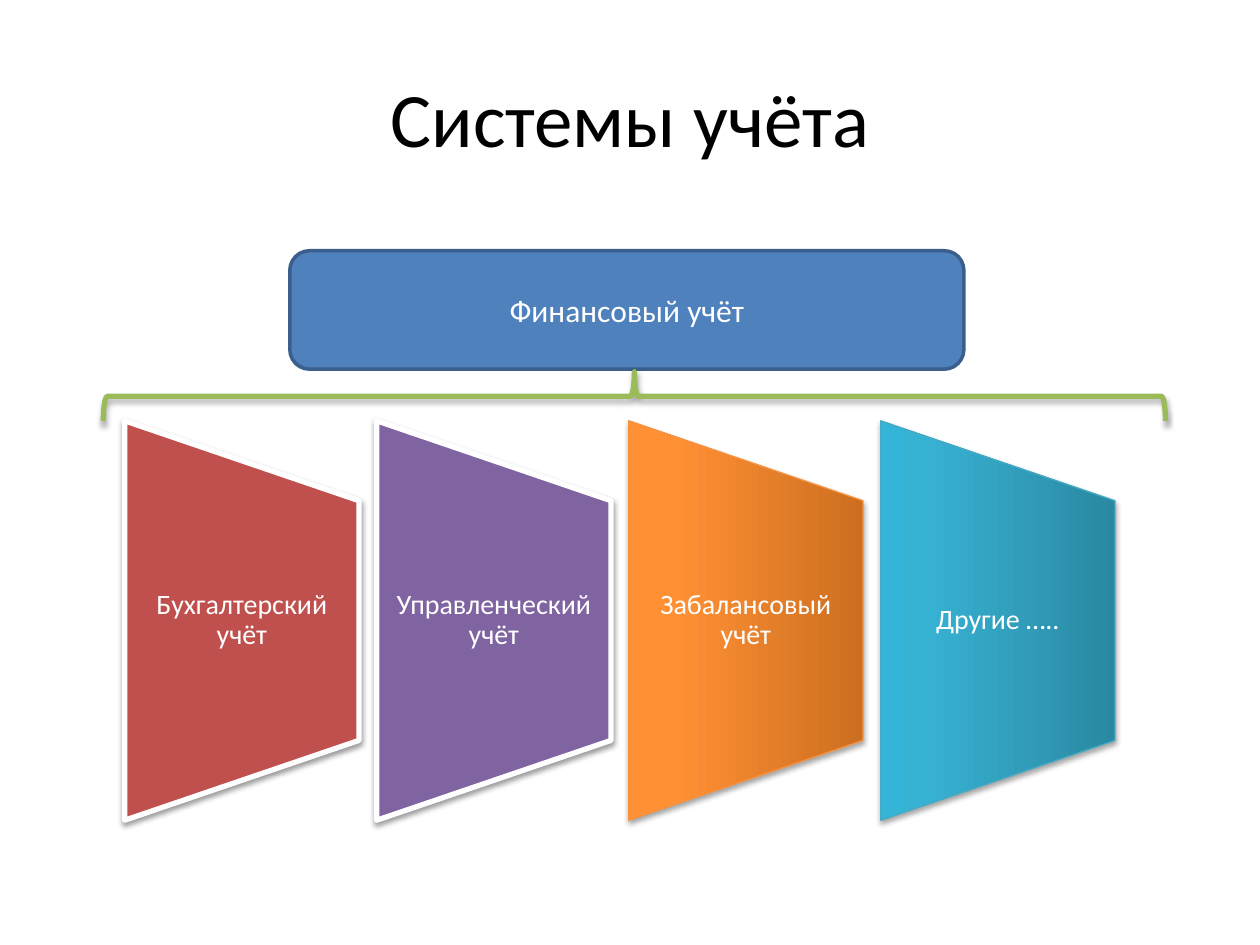
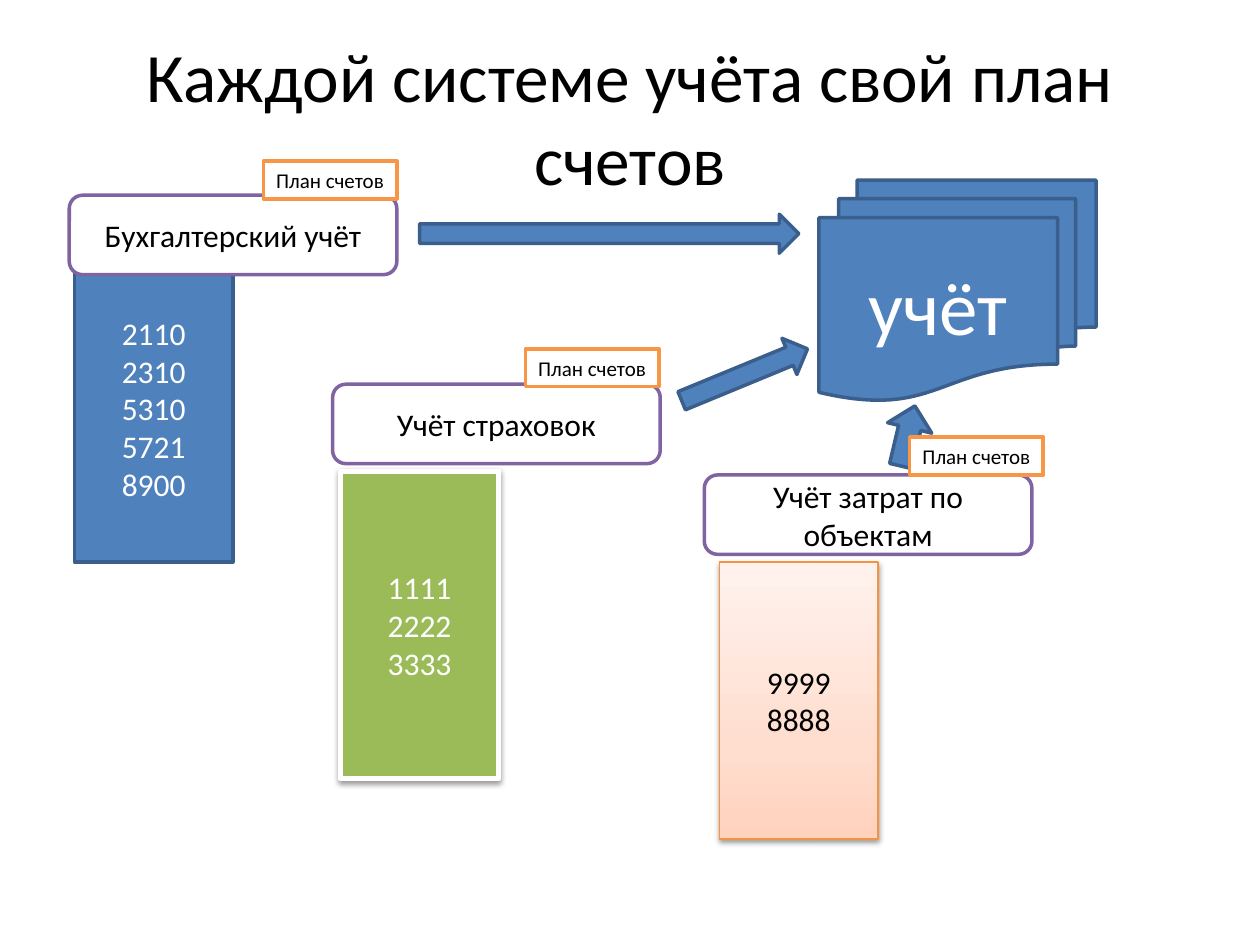
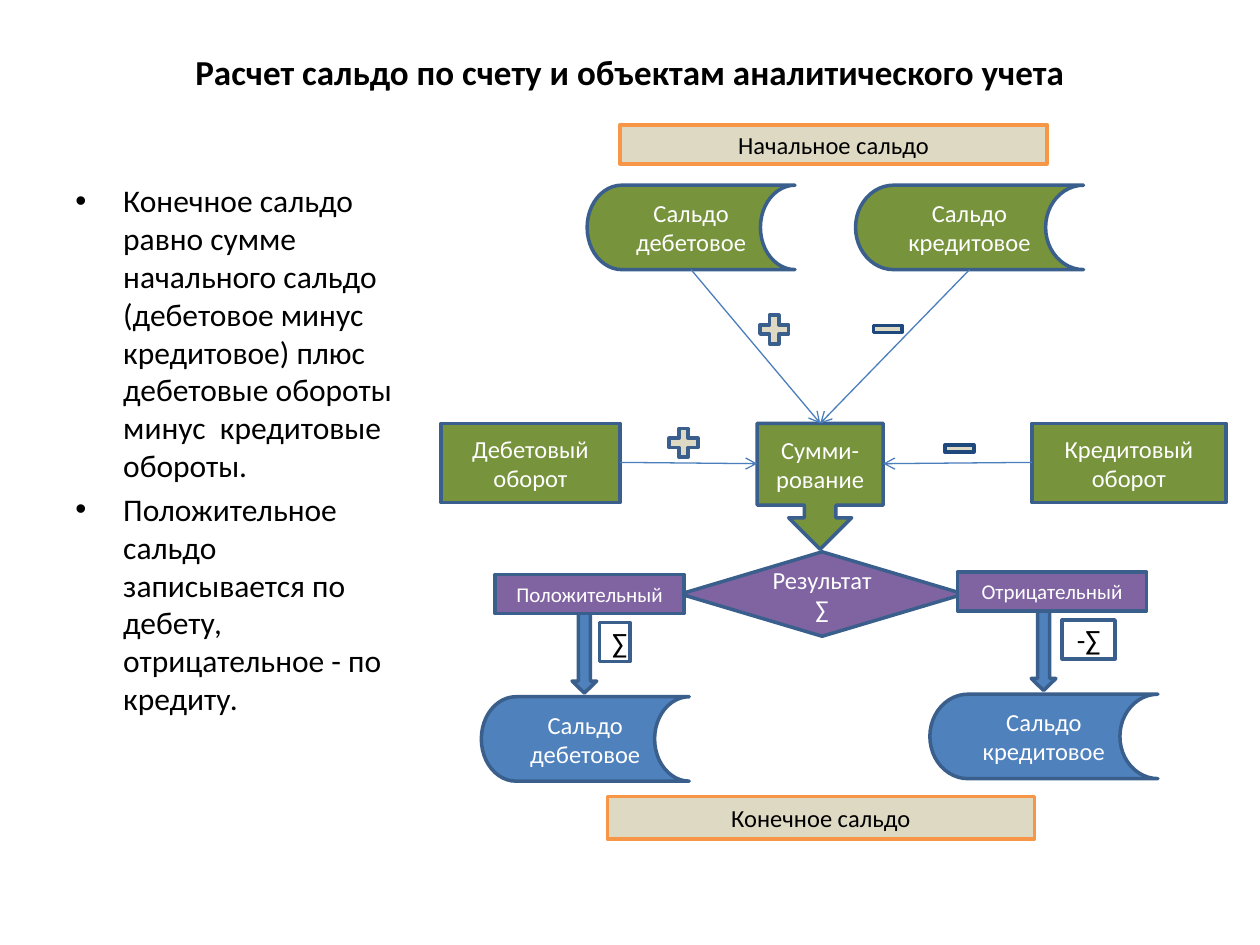
from copy import deepcopy

from lxml.etree import SubElement
from pptx import Presentation
from pptx.dml.color import RGBColor
from pptx.enum.shapes import MSO_CONNECTOR, MSO_SHAPE as SHAPE
from pptx.enum.text import MSO_ANCHOR, PP_ALIGN
from pptx.oxml.ns import qn
from pptx.util import Inches, Pt

FONT = "Calibri"
BLACK = RGBColor(0x00, 0x00, 0x00)
WHITE = RGBColor(0xFF, 0xFF, 0xFF)
BLUE = RGBColor(0x4F, 0x81, 0xBD)
BLUE_EDGE = RGBColor(0x3A, 0x5F, 0x8C)
BLUE_LINE = RGBColor(0x4B, 0x7E, 0xBC)
NAVY = RGBColor(0x1F, 0x49, 0x7D)
RED = RGBColor(0xC0, 0x50, 0x4D)
PURPLE = RGBColor(0x80, 0x64, 0xA2)
GREEN = RGBColor(0x9B, 0xBB, 0x59)
DARK_GREEN = RGBColor(0x77, 0x93, 0x3C)
ORANGE = RGBColor(0xF7, 0x96, 0x46)
ORANGE_EDGE = RGBColor(0xF6, 0x92, 0x40)
TEAL_EDGE = RGBColor(0x46, 0xAA, 0xC5)
TAN = RGBColor(0xDD, 0xD9, 0xC3)
ORANGE_GRADIENT = [(0, RGBColor(0xCC, 0x6E, 0x20)), (0.8, RGBColor(0xFF, 0x90, 0x34)),
                   (1, RGBColor(0xFF, 0x91, 0x36))]
TEAL_GRADIENT = [(0, RGBColor(0x2A, 0x88, 0xA2)), (0.8, RGBColor(0x37, 0xB1, 0xD2)),
                 (1, RGBColor(0x34, 0xB4, 0xD6))]
PEACH_GRADIENT = [(0, RGBColor(0xFF, 0xD2, 0xBD)), (0.35, RGBColor(0xFF, 0xDE, 0xD0)),
                  (1, RGBColor(0xFF, 0xF2, 0xED))]


def write(tf, lines, size, color, align=PP_ALIGN.CENTER, bold=False, spacing=None):
    tf.word_wrap = True
    for i, line in enumerate(lines):
        p = tf.paragraphs[0] if i == 0 else tf.add_paragraph()
        p.alignment = align
        p.line_spacing = spacing
        r = p.add_run()
        r.text = line
        r.font.name = FONT
        r.font.size = Pt(size)
        r.font.bold = bold
        r.font.color.rgb = color


def add_text(s, box, lines, size, color=BLACK, anchor=MSO_ANCHOR.MIDDLE, **style):
    tf = s.shapes.add_textbox(*map(Inches, box)).text_frame
    tf.vertical_anchor = anchor
    write(tf, lines, size, color, **style)
    return tf


def set_fill(sp, fill):
    if fill is None:
        sp.fill.background()
    elif isinstance(fill, list):
        sp.fill.gradient()
        sp.fill.gradient_angle = 90
        gs = sp._element.spPr.find(".//" + qn("a:gs"))
        gs.addnext(deepcopy(gs))
        for stop, (position, color) in zip(sp.fill.gradient_stops, fill):
            stop.position = position
            stop.color.rgb = color
    else:
        sp.fill.solid()
        sp.fill.fore_color.rgb = fill


def add_shadow(sp, alpha=38, dist=20000):
    effects = sp._element.spPr.find(qn("a:effectLst"))
    shadow = SubElement(effects, qn("a:outerShdw"), blurRad="40000", dist=str(dist),
                        dir="5400000", rotWithShape="0")
    color = SubElement(shadow, qn("a:srgbClr"), val="000000")
    SubElement(color, qn("a:alpha"), val=str(alpha * 1000))


def add_box(s, kind, box, fill=BLUE, edge=BLUE_EDGE, width=2, lines=(), size=18,
            color=WHITE, rotation=0, inset=0.1):
    sp = s.shapes.add_shape(kind, *map(Inches, box))
    sp.shadow.inherit = False
    sp.rotation = rotation
    set_fill(sp, fill)
    sp.line.color.rgb = edge
    sp.line.width = Pt(width)
    tf = sp.text_frame
    tf.margin_left = tf.margin_right = Inches(inset)
    write(tf, lines, size, color)
    return sp


def add_arrow_line(s, start, end):
    line = s.shapes.add_connector(MSO_CONNECTOR.STRAIGHT, *map(Inches, start + end))
    line.line.color.rgb = BLUE_LINE
    line.line.width = Pt(0.75)
    spPr = line._element.spPr
    SubElement(spPr.find(qn("a:ln")), qn("a:tailEnd"), type="arrow")
    SubElement(spPr, qn("a:effectLst"))


def add_slide(prs, title, size=44, height=1.25, bold=False):
    s = prs.slides.add_slide(prs.slide_layouts[6])
    add_text(s, (0.5, 0.3, 9, height), [title], size, bold=bold)
    return s


def system_panel(s, box, name, fill, edge, width, shadow):
    x, y, w, h = box
    turned = (x + (w - h) / 2, y + (h - w) / 2, h, w)
    sp = add_box(s, SHAPE.FLOWCHART_MANUAL_OPERATION, turned, fill, edge, width, rotation=270)
    add_shadow(sp, *shadow)
    tf = add_text(s, (x, y + h / 5, w, h * 3 / 5), [name], 16, WHITE, spacing=0.9)
    tf.margin_left = tf.margin_right = Inches(0.11)
    tf.margin_top = tf.margin_bottom = 0


def systems_slide(prs):
    s = add_slide(prs, "Системы учёта")
    add_box(s, SHAPE.FLOWCHART_ALTERNATE_PROCESS, (2.3, 1.99, 5.35, 0.94),
            lines=["Финансовый учёт"])
    flat, deep = (38, 20000), (35, 23000)
    panels = [
        ("Бухгалтерский учёт", RED, WHITE, 3, flat),
        ("Управленческий учёт", PURPLE, WHITE, 3, flat),
        ("Забалансовый учёт", ORANGE_GRADIENT, ORANGE_EDGE, 0.75, deep),
        ("Другие …..", TEAL_GRADIENT, TEAL_EDGE, 0.75, deep),
    ]
    for i, panel in enumerate(panels):
        system_panel(s, (0.99 + 2 * i, 3.34, 1.86, 3.17), *panel)
    brace = add_box(s, SHAPE.RIGHT_BRACE, (4.84, -1.07, 0.39, 8.43), None, GREEN, 3,
                    rotation=270)
    add_shadow(brace, *deep)


def account_plan(s, x, y, name, accounts, column, tag, fill, edge, width, color):
    dx, dy, height = column
    sp = add_box(s, SHAPE.RECTANGLE, (x + dx, y + dy, 1.26, height), fill, edge, width,
                 accounts, color=color)
    if fill != BLUE:
        add_shadow(sp)
    add_box(s, SHAPE.ROUNDED_RECTANGLE, (x, y, 2.6, 0.63), WHITE, PURPLE,
            lines=[name], color=BLACK)
    add_box(s, SHAPE.RECTANGLE, (x + tag[0], y + tag[1], 1.06, 0.3), WHITE, ORANGE,
            lines=["План счетов"], size=12, color=BLACK, inset=0.05)


def plans_slide(prs):
    s = add_slide(prs, "Каждой системе учёта свой план счетов", 39.6)
    add_box(s, SHAPE.FLOWCHART_MULTIDOCUMENT, (6.5, 1.43, 2.2, 1.75), lines=["учёт"], size=44)
    for box, rotation in [((3.33, 1.7, 3.01, 0.31), 0), ((5.37, 2.82, 1.08, 0.31), 337.6),
                          ((6.96, 3.28, 0.49, 0.36), 283.3)]:
        add_box(s, SHAPE.RIGHT_ARROW, box, rotation=rotation)
    account_plan(s, 0.55, 1.55, "Бухгалтерский учёт", ["2110", "2310", "5310", "5721", "8900"],
                 (0.04, 0.47, 2.44), (1.54, -0.27), BLUE, BLUE_EDGE, 2, WHITE)
    account_plan(s, 2.64, 3.05, "Учёт страховок", ["1111", "2222", "3333"],
                 (0.06, 0.69, 2.44), (1.53, -0.28), GREEN, WHITE, 3, WHITE)
    account_plan(s, 5.59, 3.77, "Учёт затрат по объектам", ["9999", "8888"],
                 (0.12, 0.69, 2.2), (1.63, -0.3), PEACH_GRADIENT, ORANGE_EDGE, 0.75, BLACK)


def rules_list(s, box, rules):
    tf = add_text(s, box, rules, 18, anchor=MSO_ANCHOR.TOP, align=PP_ALIGN.LEFT)
    for p in tf.paragraphs:
        p.space_before = Pt(3.6)
        pPr = p._p.get_or_add_pPr()
        pPr.set("marL", str(Inches(0.38)))
        pPr.set("indent", str(-Inches(0.38)))
        SubElement(pPr, qn("a:buFont"), typeface="Arial")
        SubElement(pPr, qn("a:buChar"), char="•")


def band(s, box, name):
    add_box(s, SHAPE.RECTANGLE, box, TAN, ORANGE, lines=[name], size=14, color=BLACK)


def balance(s, x, y, w, side, fill):
    add_box(s, SHAPE.FLOWCHART_STORED_DATA, (x, y, w, 0.67), fill,
            lines=["Сальдо " + side], size=14)


def sign(s, x, y, plus):
    if plus:
        add_box(s, SHAPE.MATH_PLUS, (x, y, 0.31, 0.31), TAN)
    else:
        add_box(s, SHAPE.MATH_MINUS, (x, y, 0.31, 0.24), TAN, NAVY)


def opening_balances(s, x, y, target):
    band(s, (x + 0.26, y, 3.39, 0.31), "Начальное сальдо")
    for dx, w, side in [(0, 1.65, "дебетовое"), (2.13, 1.81, "кредитовое")]:
        balance(s, x + dx, y + 0.48, w, side, DARK_GREEN)
        add_arrow_line(s, (x + dx + w / 2, y + 1.15), target)
    sign(s, x + 1.33, y + 1.47, True)
    sign(s, x + 2.23, y + 1.5, False)


def turnovers(s, x, y):
    for dx, w, name in [(0, 1.42, "Дебетовый оборот"), (4.69, 1.54, "Кредитовый оборот")]:
        add_box(s, SHAPE.RECTANGLE, (x + dx, y, w, 0.63), DARK_GREEN, lines=[name], size=14)
    add_box(s, SHAPE.DOWN_ARROW_CALLOUT, (x + 2.51, y, 1, 1), DARK_GREEN,
            lines=["Сумми-рование"], size=14)
    for start, end in [(1.42, 2.51), (4.69, 3.51)]:
        add_arrow_line(s, (x + start, y + 0.31), (x + end, y + 0.32))
    sign(s, x + 1.77, y, True)
    sign(s, x + 3.96, y + 0.08, False)


def result_branch(s, x, y, name, arrow_x, total, total_w, side, side_dx, side_w, mirrored):
    w, h = 0.82, 0.38
    arrow = add_box(s, SHAPE.BENT_ARROW, (x + arrow_x - w / 2, y + 0.53 - h / 2, w, h),
                    rotation=90)
    for i, value in enumerate((0.25, 0.257, 0.25, 0.438)):
        arrow.adjustments[i] = value
    if mirrored:
        arrow._element.spPr.find(qn("a:xfrm")).set("flipV", "1")
    add_box(s, SHAPE.RECTANGLE, (x, y, 1.5, 0.31), PURPLE, lines=[name], size=12)
    add_box(s, SHAPE.RECTANGLE, (x + 0.83, y + 0.38, total_w, 0.31), WHITE,
            lines=[total], size=16, color=BLACK)
    balance(s, x + side_dx, y + 0.97, side_w, side, BLUE)


def saldo_slide(prs):
    s = add_slide(prs, "Расчет сальдо по счету и объектам аналитического учета", 20, 0.54, True)
    rules_list(s, (0.5, 1.39, 2.77, 5.31), [
        "Конечное сальдо равно сумме начального сальдо (дебетовое минус кредитовое) "
        "плюс дебетовые обороты минус  кредитовые обороты.",
        "Положительное сальдо записывается по дебету, отрицательное - по кредиту.",
    ])
    turnovers(s, 3.5, 3.36)
    opening_balances(s, 4.66, 0.99, (6.51, 3.36))
    add_box(s, SHAPE.FLOWCHART_DECISION, (5.4, 4.38, 2.25, 0.67), PURPLE,
            lines=["Результат ∑"], size=14)
    result_branch(s, 3.93, 4.56, "Положительный", 0.8, "∑", 0.24,
                  "дебетовое", -0.11, 1.65, True)
    result_branch(s, 7.6, 4.54, "Отрицательный", 0.59, "-∑", 0.42,
                  "кредитовое", -0.22, 1.81, False)
    band(s, (4.82, 6.32, 3.39, 0.34), "Конечное сальдо")


def main():
    prs = Presentation()
    prs.slide_width, prs.slide_height = Inches(10), Inches(7.5)
    systems_slide(prs)
    plans_slide(prs)
    saldo_slide(prs)
    prs.save("out.pptx")


if __name__ == "__main__":
    main()
